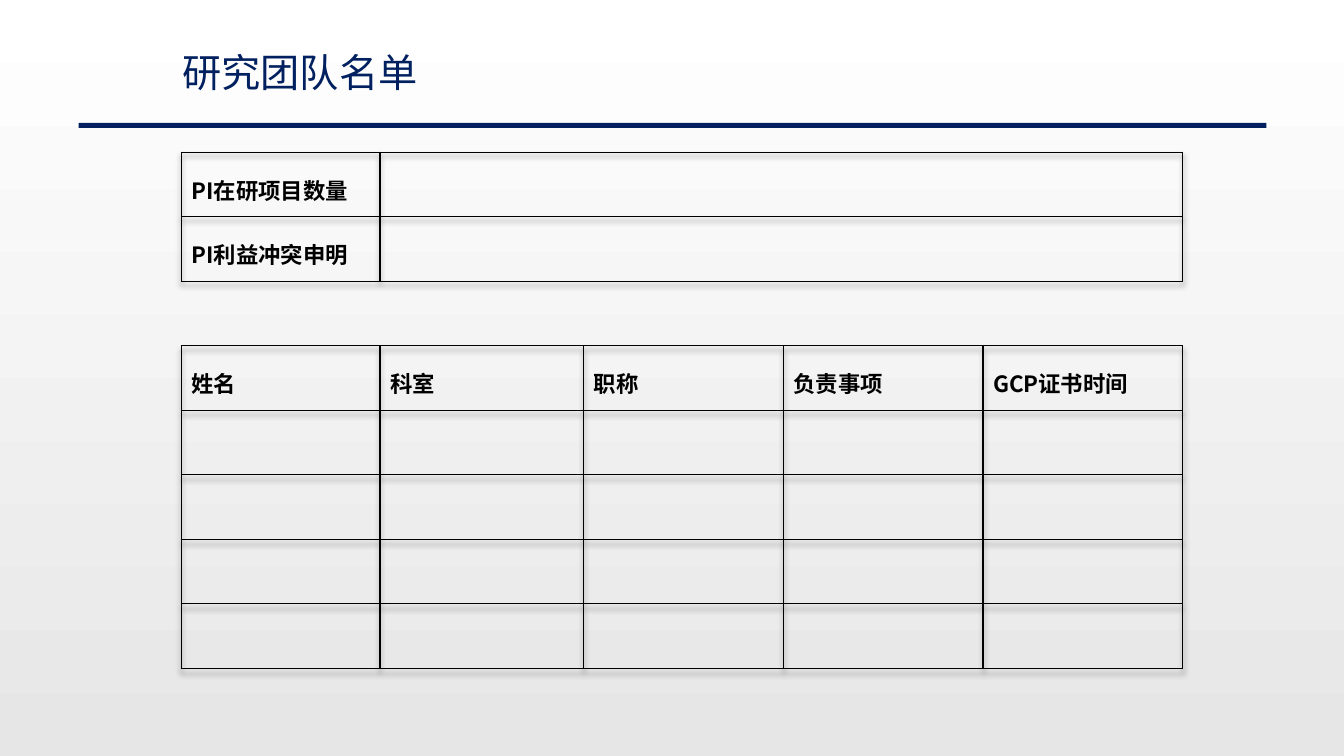
from lxml import etree
from pptx import Presentation, util as u
from pptx.dml.color import RGBColor
from pptx.enum import shapes, text
from pptx.oxml.ns import qn

THEME = {
    "navy": RGBColor.from_string("002060"),
    "ink": RGBColor.from_string("000000"),
    "backdrop": ("FFFFFF", "E7E6E6"),
    "font": "Noto Sans CJK SC",
    "title_size": u.Pt(28),
    "cell_size": u.Pt(16),
    "border": u.Pt(1),
}
COLUMNS = [1.97, 2.02, 1.98, 1.98, 1.98]
ROW_HEIGHT = 0.64
SPACER_ROW = 2
ROSTER = [
    ["PI在研项目数量"],
    ["PI利益冲突申明"],
    [],
    ["姓名", "科室", "职称", "负责事项", "GCP证书时间"],
    [], [], [], [],
]


def style_run(run, size, color, bold):
    run.font.name = THEME["font"]
    run.font.size = size
    run.font.bold = bold
    run.font.color.rgb = color
    etree.SubElement(run.font._element, qn("a:ea"), typeface=THEME["font"])


def draw_border(cell, sides):
    for side in "LRTB":
        width = THEME["border"] if side in sides else 0
        line = etree.SubElement(cell._tc.get_or_add_tcPr(), qn(f"a:ln{side}"), w=str(width))
        if side in sides:
            fill = etree.SubElement(line, qn("a:solidFill"))
            etree.SubElement(fill, qn("a:srgbClr"), val=str(THEME["ink"]))
        else:
            etree.SubElement(line, qn("a:noFill"))


deck = Presentation()
deck.slide_width, deck.slide_height = u.Inches(13.33), u.Inches(7.5)
slide = deck.slides.add_slide(deck.slide_layouts.get_by_name("Title Only"))

# Background gradient, top to bottom
backdrop = slide.background.fill
backdrop.gradient()
backdrop.gradient_angle = 270
for stop, position, shade in zip(backdrop.gradient_stops, (0, 1), THEME["backdrop"]):
    stop.position = position
    stop.color.rgb = RGBColor.from_string(shade)

# Rule under the heading
rule = slide.shapes.add_shape(
    shapes.MSO_SHAPE.RECTANGLE,
    u.Inches(0.78), u.Inches(1.22), u.Inches(11.78), u.Inches(0.05))
rule.shadow.inherit = False
rule.fill.solid()
rule.fill.fore_color.rgb = THEME["navy"]
rule.line.fill.background()

# Heading
heading = slide.shapes.title
heading.left, heading.top = u.Inches(1.71), u.Inches(0.6)
heading.width, heading.height = u.Inches(3.43), u.Inches(0.42)
heading.text_frame.text = "研究团队名单"
heading.text_frame.auto_size = text.MSO_AUTO_SIZE.NONE
heading.text_frame.vertical_anchor = text.MSO_ANCHOR.MIDDLE
heading_line = heading.text_frame.paragraphs[0]
heading_line.alignment = text.PP_ALIGN.LEFT
heading_line.line_spacing = u.Pt(19)
style_run(heading_line.runs[0], THEME["title_size"], THEME["navy"], False)

# Team table grid
team = slide.shapes.add_table(
    len(ROSTER), len(COLUMNS), u.Inches(1.8), u.Inches(1.51),
    u.Inches(sum(COLUMNS)), u.Inches(ROW_HEIGHT * len(ROSTER))).table
team.first_row = team.horz_banding = False
for column, width in zip(team.columns, COLUMNS):
    column.width = u.Inches(width)
for row in team.rows:
    row.height = u.Inches(ROW_HEIGHT)

# Soft shadow below the grid lines
effects = etree.SubElement(team._tbl.tblPr, qn("a:effectLst"))
team._tbl.tblPr.insert(0, effects)
shadow = etree.SubElement(effects, qn("a:outerShdw"),
                          blurRad="50800", dist="38100", dir="5400000", algn="t")
shadow_color = etree.SubElement(shadow, qn("a:srgbClr"), val=str(THEME["ink"]))
etree.SubElement(shadow_color, qn("a:alpha"), val="40000")

# Cell borders and labels
for r, labels in enumerate(ROSTER):
    for c in range(len(COLUMNS)):
        cell = team.cell(r, c)
        draw_border(cell, "TB" if r == SPACER_ROW else "LRTB")
        cell.fill.background()
        if c < len(labels):
            cell.text_frame.text = labels[c]
            label = cell.text_frame.paragraphs[0]
            label.line_spacing = 1.5
            style_run(label.runs[0], THEME["cell_size"], THEME["ink"], True)

# Wide answer cells and the spacer between the two blocks
for r, first in ((0, 1), (1, 1), (SPACER_ROW, 0)):
    team.cell(r, first).merge(team.cell(r, len(COLUMNS) - 1))

deck.save("out.pptx")
